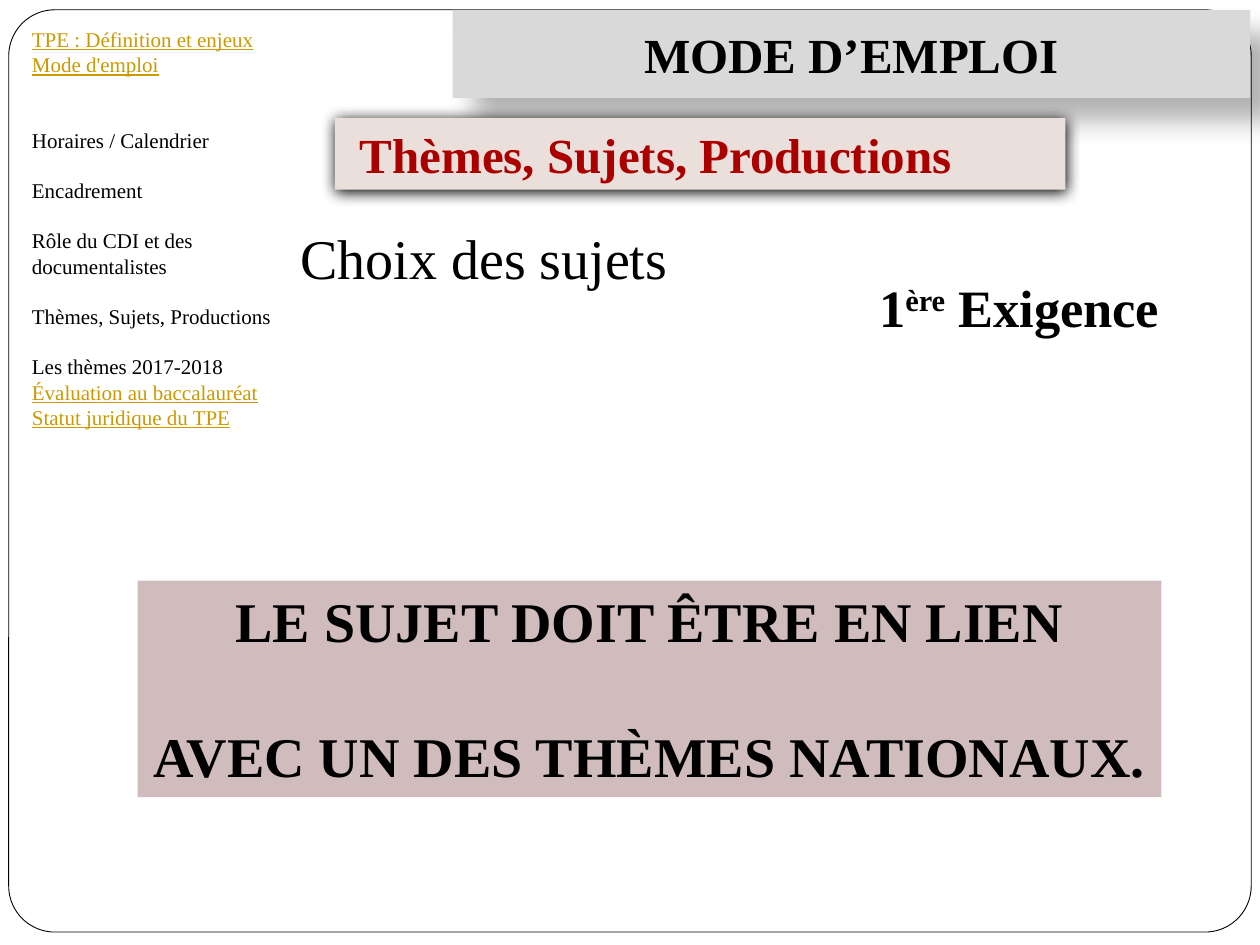
from lxml.etree import SubElement
from pptx import Presentation
from pptx.dml.color import RGBColor
from pptx.enum.shapes import MSO_SHAPE
from pptx.enum.text import MSO_ANCHOR, MSO_AUTO_SIZE, PP_ALIGN
from pptx.oxml.ns import qn
from pptx.util import Pt

FONT = "Times New Roman"
BLACK, WHITE, GOLD, RED = "000000", "FFFFFF", "CC9900", "AA0000"
LEAD = 1.2  # line height relative to text size


def color(code):
    return RGBColor.from_string(code)


class Page:
    def __init__(self, deck):
        self.slide = deck.slides.add_slide(deck.slide_layouts[5])
        self.shapes = self.slide.shapes

    def paint(self, shape, fill, line=None):
        shape.fill.solid()
        shape.fill.fore_color.rgb = color(fill)
        if line:
            shape.line.color.rgb = color(line)
            shape.line.width = Pt(0.5)
        else:
            shape.line.fill.background()
        shape.shadow.inherit = False

    def shade(self, shape, alpha, blur, dist, angle):
        effects = shape.element.spPr.find(qn("a:effectLst"))
        outer = SubElement(effects, qn("a:outerShdw"), blurRad=str(Pt(blur)),
                           dist=str(Pt(dist)), dir=str(angle * 60000),
                           algn="tl", rotWithShape="0")
        tint = SubElement(outer, qn("a:srgbClr"), val=BLACK)
        SubElement(tint, qn("a:alpha"), val=str(alpha * 1000))

    def box(self, kind, at, fill, line=None):
        shape = self.shapes.add_shape(kind, *map(Pt, at))
        self.paint(shape, fill, line)
        return shape

    def label(self, at):
        return self.shapes.add_textbox(*map(Pt, at))

    def frame(self, shape, anchor=MSO_ANCHOR.TOP):
        text = shape.text_frame
        text.word_wrap = True
        text.auto_size = MSO_AUTO_SIZE.NONE
        text.vertical_anchor = anchor
        return text

    def put(self, text, rows, size, bold=False, align=PP_ALIGN.LEFT):
        """Each row holds the blank lines above it and its (text, color, style) runs."""
        for i, (gap, runs) in enumerate(rows):
            para = text.paragraphs[0] if i == 0 else text.add_paragraph()
            para.alignment = align
            para.line_spacing = Pt(size * LEAD)
            para.space_before = Pt(gap * size * LEAD)
            for words, ink, style in runs:
                run = para.add_run()
                run.text = words
                font = run.font
                font.name, font.size, font.bold = FONT, Pt(size), bold
                font.color.rgb = color(ink)
                if style == "link":
                    font.underline = True
                elif style == "super":
                    run._r.get_or_add_rPr().set("baseline", "30000")

    def title(self, words, at, fill, size):
        shape = self.shapes.title
        shape.left, shape.top, shape.width, shape.height = map(Pt, at)
        self.paint(shape, fill)
        # Bring the title in front of the page frame
        shape.element.getparent().append(shape.element)
        self.put(self.frame(shape, MSO_ANCHOR.MIDDLE),
                 [(0, [(words, BLACK, None)])], size, True, PP_ALIGN.CENTER)
        return shape


def main():
    deck = Presentation()
    deck.slide_width, deck.slide_height = Pt(720), Pt(540)
    page = Page(deck)

    # Page frame
    border = page.box(MSO_SHAPE.ROUNDED_RECTANGLE, (5, 5.6, 710, 527), WHITE, BLACK)
    border.adjustments[0] = 0.05

    # Title band
    head = page.title("MODE D’EMPLOI", (258.6, 5.6, 455.8, 50.4), "D9D9D9", 28)
    page.shade(head, 30, 15, 18, 45)

    # Side menu
    menu = [
        (0, "TPE : Définition et enjeux", True),
        (0, "Mode d'emploi", True),
        (2, "Horaires / Calendrier", False),
        (1, "Encadrement", False),
        (1, "Rôle du CDI et des documentalistes", False),
        (1, "Thèmes, Sujets, Productions", False),
        (1, "Les thèmes 2017-2018", False),
        (0, "Évaluation au baccalauréat", True),
        (0, "Statut juridique du TPE", True),
    ]
    rows = [(gap, [(words, GOLD if link else BLACK, "link" if link else None)])
            for gap, words, link in menu]
    page.put(page.frame(page.label((11.2, 11.5, 153, 240))), rows, 12)

    # Section band
    band = page.box(MSO_SHAPE.RECTANGLE, (191.4, 67.5, 417.4, 41), "EBDFDB")
    page.shade(band, 100, 8.5, 1, 90)
    text = page.frame(band)
    text.margin_left = Pt(14.2)
    page.put(text, [(0, [("Thèmes, Sujets, Productions", RED, None)])], 28, True)

    # Rule to follow
    rule = page.box(MSO_SHAPE.RECTANGLE, (78.7, 331.8, 585, 123.7), "D0BCBC")
    rows = [(0, [("LE SUJET DOIT ÊTRE EN LIEN", BLACK, None)]),
            (1, [("AVEC UN DES THÈMES NATIONAUX.", BLACK, None)])]
    page.put(page.frame(rule), rows, 32, True, PP_ALIGN.CENTER)

    # Headings
    topic = page.frame(page.label((164.6, 124, 313, 46)))
    page.put(topic, [(0, [("Choix des sujets", BLACK, None)])], 32)
    need = page.frame(page.label((495.2, 153.5, 214, 44)))
    page.put(need, [(0, [("1", BLACK, None), ("ère", BLACK, "super"),
                         (" Exigence", BLACK, None)])], 30, True)

    deck.save("out.pptx")


if __name__ == "__main__":
    main()
